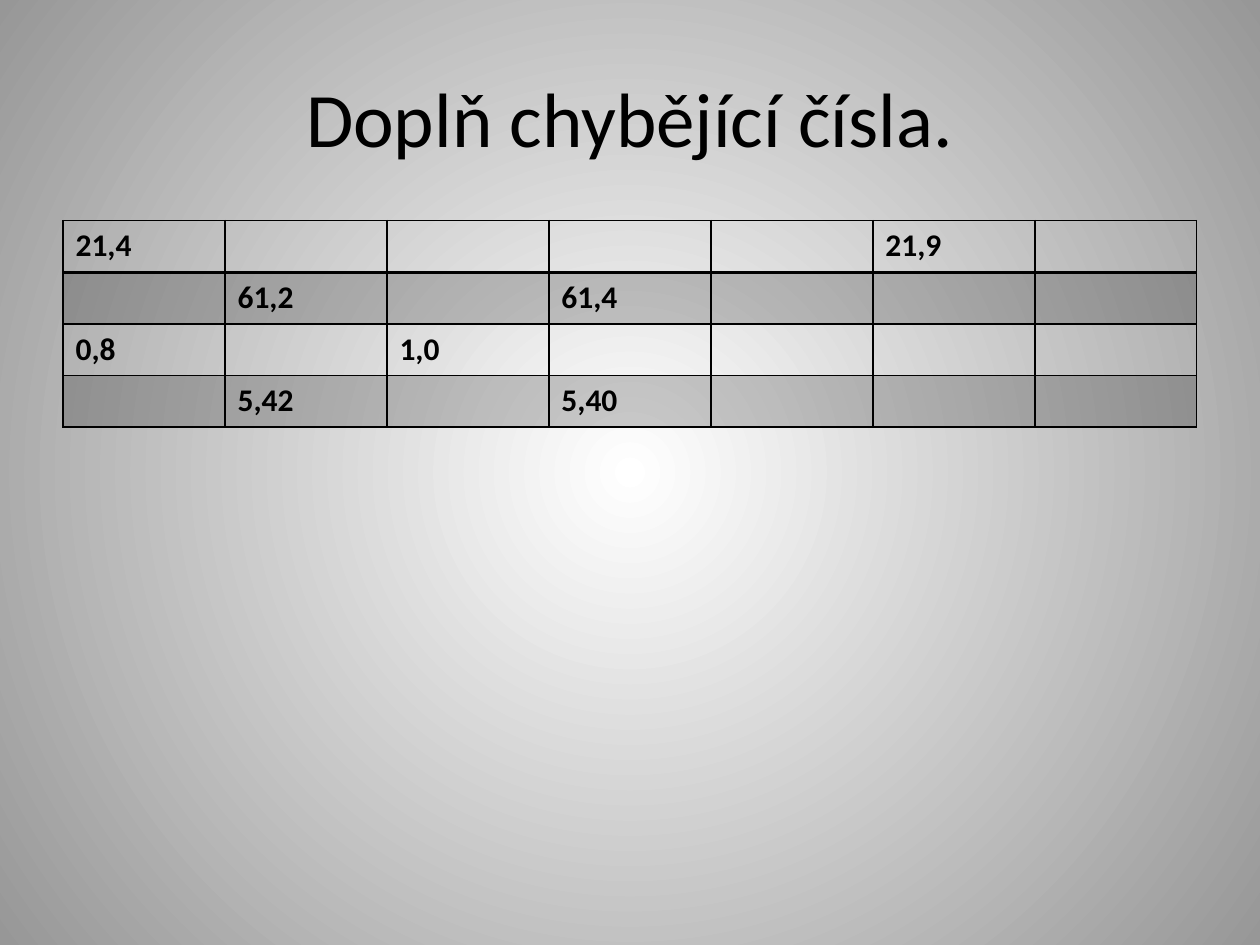
import pptx
import pptx.util
import pptx.dml.color
import pptx.enum.text
import pptx.oxml
import pptx.oxml.ns
from lxml import etree

Inches = pptx.util.Inches
qn = pptx.oxml.ns.qn

TITLE = "Doplň chybějící čísla."
ROWS = [
    ["21,4", "", "", "", "", "21,9", ""],
    ["", "61,2", "", "61,4", "", "", ""],
    ["0,8", "", "1,0", "", "", "", ""],
    ["", "5,42", "", "5,40", "", "", ""],
]
INK = "000000"
GLOW = ["FFFFFF", "979797"]
LEFT, WIDTH = 0.5, 9
TOP, ROW = 1.75, 0.41
BAND = 20  # opacity of the shaded rows, percent


def rgb(code):
    return pptx.dml.color.RGBColor.from_string(code)


def write(frame, text, size=18, bold=False, align="LEFT"):
    par = frame.paragraphs[0]
    par.alignment = getattr(pptx.enum.text.PP_ALIGN, align)
    run = par.add_run()
    run.text = text
    font = run.font
    font.name, font.size, font.bold = "Calibri", pptx.util.Pt(size), bold
    font.color.rgb = rgb(INK)


def glow(slide):
    """Fill the background with a gradient spreading from the centre."""
    fill = slide.background.fill
    fill.gradient()
    for stop, code, place in zip(fill.gradient_stops, GLOW, (0, 1)):
        stop.color.rgb, stop.position = rgb(code), place
    grad = slide.element.find(".//" + qn("a:gradFill"))
    grad.remove(grad.find(qn("a:lin")))
    ring = etree.SubElement(grad, qn("a:path"), {"path": "circle"})
    etree.SubElement(ring, qn("a:fillToRect"), dict.fromkeys("ltrb", "50000"))


def shade(cell):
    cell.fill.solid()
    cell.fill.fore_color.rgb = rgb(INK)
    tone = cell.fill.fore_color._xFill.find(qn("a:srgbClr"))
    etree.SubElement(tone, qn("a:alpha"), {"val": str(BAND * 1000)})


def border(cell, row):
    """Draw thin edges, with a thicker rule below the first row."""
    props = cell._tc.get_or_add_tcPr()
    thick = {(0, "B"), (1, "T")}
    for spot, side in enumerate("LRTB"):
        width = pptx.util.Pt(2 if (row, side) in thick else 1)
        line = etree.Element(qn("a:ln" + side), {"w": str(int(width))})
        fill = etree.SubElement(line, qn("a:solidFill"))
        etree.SubElement(fill, qn("a:srgbClr"), {"val": INK})
        props.insert(spot, line)


def grid(slide):
    count = len(ROWS[0])
    table = slide.shapes.add_table(
        len(ROWS), count, Inches(LEFT), Inches(TOP),
        Inches(WIDTH), Inches(ROW * len(ROWS))).table
    table.horz_banding = False
    for col in table.columns:
        col.width = Inches(WIDTH / count)
    for row, texts in enumerate(ROWS):
        table.rows[row].height = Inches(ROW)
        for col, text in enumerate(texts):
            cell = table.cell(row, col)
            if row % 2:
                shade(cell)
            else:
                cell.fill.background()
            border(cell, row)
            if text:
                write(cell.text_frame, text, bold=True)


def main():
    deck = pptx.Presentation()
    deck.slide_width, deck.slide_height = Inches(10), Inches(7.5)
    slide = deck.slides.add_slide(deck.slide_layouts[6])
    glow(slide)
    head = slide.shapes.add_textbox(
        Inches(LEFT), Inches(0.3), Inches(WIDTH), Inches(1.25)).text_frame
    head.word_wrap = True
    head.vertical_anchor = pptx.enum.text.MSO_ANCHOR.MIDDLE
    write(head, TITLE, size=44, align="CENTER")
    grid(slide)
    deck.save("out.pptx")


if __name__ == "__main__":
    main()
